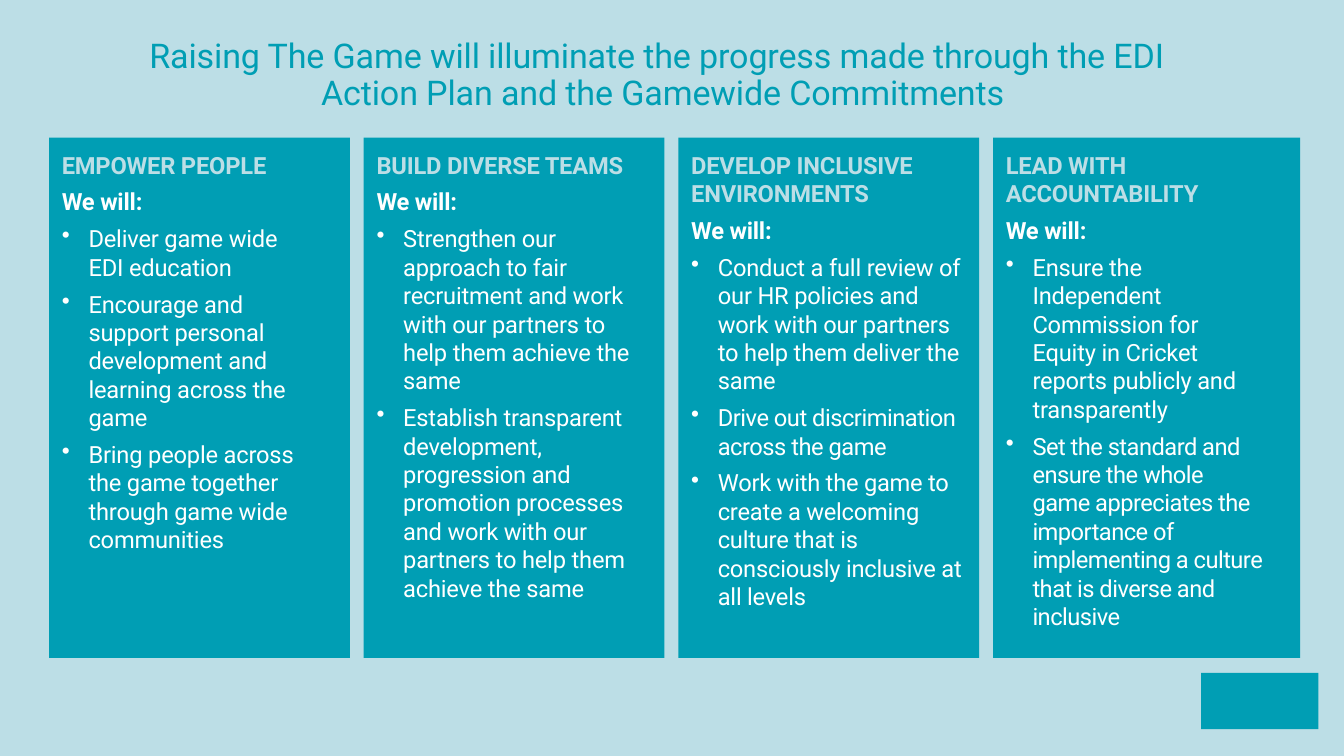
from dataclasses import dataclass

from lxml.etree import SubElement
from pptx import Presentation
from pptx.dml.color import RGBColor as Rgb
from pptx.enum.shapes import MSO_SHAPE as Kind
from pptx.enum.text import MSO_ANCHOR as Anchor, PP_ALIGN as Align
from pptx.oxml.ns import qn
from pptx.util import Pt

SCALE = 9144  # EMU in one px, 100 px to the inch


@dataclass(frozen=True)
class Theme:
    font: str = "Roboto"
    teal: str = "009EB4"
    pale: str = "BCDEE6"
    white: str = "FFFFFF"
    head: int = 23
    body: int = 16
    lead: int = 25
    gap: float = 5.7


@dataclass(frozen=True)
class Point:
    """A bullet; tail is an unbulleted line that continues it."""
    text: str
    track: float = -0.1
    tail: str = ""


@dataclass(frozen=True)
class Pillar:
    name: str
    width: int
    right: int  # right indent of the bullets
    points: tuple


class Page:
    def __init__(self, deck, theme):
        self.theme = theme
        self.slide = deck.slides.add_slide(deck.slide_layouts[6])
        fill = self.slide.background.fill
        fill.solid()
        fill.fore_color.rgb = Rgb.from_string(theme.pale)

    def frame(self, shape, top):
        """Set the text margins of a shape and return its text frame."""
        frame = shape.text_frame
        frame.word_wrap = True
        frame.vertical_anchor = Anchor.TOP
        frame.margin_left = frame.margin_right = frame.margin_bottom = 0
        frame.margin_top = top * SCALE
        return frame

    def block(self, x, y, w, h):
        shape = self.slide.shapes.add_shape(
            Kind.RECTANGLE, *(n * SCALE for n in (x, y, w, h)))
        shape.shadow.inherit = False
        shape.fill.solid()
        shape.fill.fore_color.rgb = Rgb.from_string(self.theme.teal)
        shape.line.fill.background()
        return shape

    def para(self, frame, left, hang=0, right=0, gap=0, dot=False):
        """Return the next paragraph, using the empty first one if it is free."""
        para = frame.paragraphs[0]
        if para.runs:
            para = frame.add_paragraph()
        para.alignment = Align.LEFT
        if gap:
            para.space_before = Pt(gap)
        props = para._p.get_or_add_pPr()
        for key, size in (("marL", left), ("marR", right), ("indent", -hang)):
            props.set(key, str(size * SCALE))
        if dot:
            SubElement(props, qn("a:buChar")).set("char", "•")
        return para

    def run(self, para, text, color, size, bold=False, track=-0.1):
        run = para.add_run()
        run.text = text
        font = run.font
        font.name, font.size, font.bold = self.theme.font, Pt(size), bold
        font.color.rgb = Rgb.from_string(color)
        run._r.get_or_add_rPr().set("spc", str(round(track * 100)))

    def title(self, text, x, y, w, h):
        box = self.slide.shapes.add_textbox(
            *(n * SCALE for n in (x, y, w, h)))
        para = self.para(self.frame(box, 6), 162, hang=161)
        para.line_spacing = Pt(self.theme.lead)
        self.run(para, text, self.theme.teal, self.theme.head)

    def pillar(self, item, x, y, h):
        theme = self.theme
        frame = self.frame(self.block(x, y, item.width, h), 12)
        self.run(self.para(frame, 12), item.name, theme.pale, theme.body, True)
        self.run(self.para(frame, 12, gap=theme.gap), "We will:",
                 theme.white, theme.body, True)
        for point in item.points:
            para = self.para(frame, 37, 25, item.right, theme.gap, True)
            self.run(para, point.text, theme.white, theme.body,
                     track=point.track)
            if point.tail:
                self.run(self.para(frame, 37), point.tail, theme.white,
                         theme.body, track=point.track)


PILLARS = (
    Pillar("EMPOWER PEOPLE", 282, 40, (
        Point("Deliver game wide EDI education"),
        Point("Encourage and support personal development and learning "
              "across the game"),
        Point("Bring people across the game together through game wide "
              "communities"),
    )),
    Pillar("BUILD DIVERSE TEAMS", 282, 20, (
        Point("Strengthen our approach to fair recruitment and work with our "
              "partners to help them achieve the same"),
        Point("Establish transparent development, progression and promotion "
              "processes and work with our partners to help them achieve "
              "the same"),
    )),
    Pillar("DEVELOP INCLUSIVE ENVIRONMENTS", 282, 9, (
        Point("Conduct a full review of our HR policies and work with our "
              "partners to help them deliver the same"),
        Point("Drive out discrimination across the game", -0.3),
        Point("Work with the game to create a welcoming culture that is",
              -0.15, "consciously inclusive at all levels"),
    )),
    Pillar("LEAD WITH ACCOUNTABILITY", 288, 47, (
        Point("Ensure the Independent Commission for Equity in Cricket "
              "reports publicly and transparently"),
        Point("Set the standard and ensure the whole game appreciates "
              "the importance of", -0.35,
              "implementing a culture that is diverse and inclusive"),
    )),
)


def main():
    deck = Presentation()
    deck.slide_width, deck.slide_height = 1260 * SCALE, 709 * SCALE
    page = Page(deck, Theme())
    page.title("Raising The Game will illuminate the progress made through "
               "the EDI Action Plan and the Gamewide Commitments",
               139, 30, 981, 76)
    for i, item in enumerate(PILLARS):
        page.pillar(item, 46 + 295 * i, 129, 488)
    page.block(1126, 631, 110, 53)
    deck.save("out.pptx")


if __name__ == "__main__":
    main()
